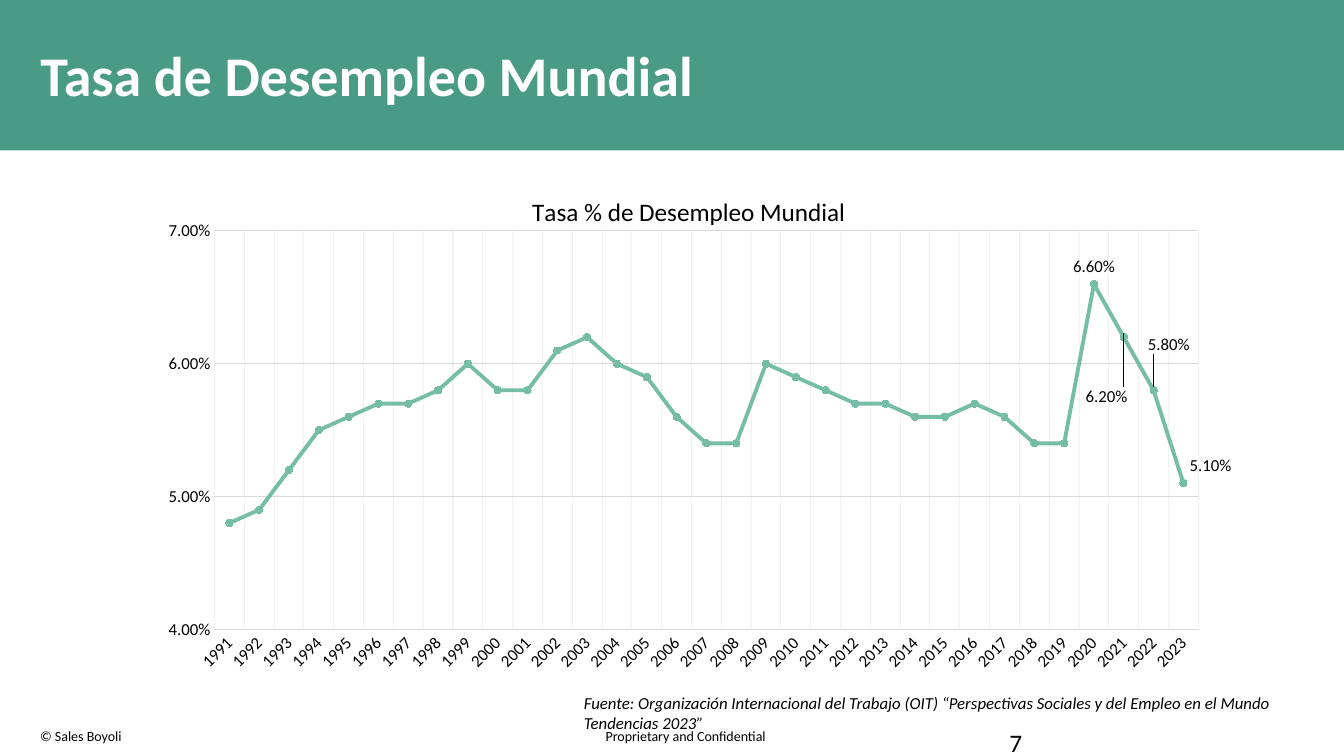
from lxml import etree
from pptx import Presentation
from pptx.chart.data import CategoryChartData
from pptx.dml.color import RGBColor
from pptx.enum.chart import XL_CHART_TYPE, XL_LABEL_POSITION, XL_MARKER_STYLE, XL_TICK_MARK
from pptx.enum.shapes import MSO_SHAPE
from pptx.enum.text import MSO_ANCHOR, MSO_AUTO_SIZE, PP_ALIGN
from pptx.oxml import parse_xml
from pptx.oxml.ns import qn
from pptx.util import Pt

LINE_CHART = XL_CHART_TYPE.LINE_MARKERS_STACKED
LABEL_ABOVE = XL_LABEL_POSITION.ABOVE
CIRCLE = XL_MARKER_STYLE.CIRCLE
NO_TICK = XL_TICK_MARK.NONE
RECTANGLE = MSO_SHAPE.RECTANGLE
MIDDLE = MSO_ANCHOR.MIDDLE
NO_AUTOFIT = MSO_AUTO_SIZE.NONE
LEFT = PP_ALIGN.LEFT

GREEN = RGBColor(0x4A, 0x9B, 0x83)
MINT = RGBColor(0x75, 0xBD, 0xA7)
GRID = RGBColor(0xD9, 0xD9, 0xD9)
PALE_GRID = RGBColor(0xF2, 0xF2, 0xF2)
BLACK = RGBColor(0, 0, 0)
WHITE = RGBColor(0xFF, 0xFF, 0xFF)
FONT = "Calibri"

TITLE_ONLY = 5
FIRST_YEAR = 1991
RATES = [
    4.8, 4.9, 5.2, 5.5, 5.6, 5.7, 5.7, 5.8, 6.0, 5.8, 5.8,
    6.1, 6.2, 6.0, 5.9, 5.6, 5.4, 5.4, 6.0, 5.9, 5.8, 5.7,
    5.7, 5.6, 5.6, 5.7, 5.6, 5.4, 5.4, 6.6, 6.2, 5.8, 5.1,
]
# Year: label shift from its place above the point, as shares of the chart
LABEL_SHIFTS = {2020: (0, 0), 2021: (-0.016, 0.149), 2022: (0.014, -0.054), 2023: (0.025, 0)}

CHART_NS = "http://schemas.openxmlformats.org/drawingml/2006/chart"
LEADER_LINES = f"""
<c:extLst xmlns:c="{CHART_NS}">
  <c:ext uri="{{CE6537A1-D6FC-4f65-9D91-7224C49458BB}}"
         xmlns:c15="http://schemas.microsoft.com/office/drawing/2012/chart">
    <c15:showLeaderLines val="1"/>
  </c:ext>
</c:extLst>"""


def style_font(font, size, color=BLACK, bold=False, italic=False):
    font.name = FONT
    font.size = Pt(size)
    font.bold = bold
    font.italic = italic
    font.color.rgb = color


def write(text_frame, lines, size, **style):
    for index, line in enumerate(lines):
        paragraph = text_frame.add_paragraph() if index else text_frame.paragraphs[0]
        paragraph.alignment = LEFT
        run = paragraph.add_run()
        run.text = line
        style_font(run.font, size, **style)


def add_text(slide, left, top, width, height, lines, size, wrap=True, **style):
    text_frame = slide.shapes.add_textbox(Pt(left), Pt(top), Pt(width), Pt(height)).text_frame
    text_frame.word_wrap = wrap
    write(text_frame, lines, size, **style)


def add_header(slide, text):
    title = slide.shapes.title
    title.left, title.top, title.width, title.height = Pt(21.6), Pt(10), Pt(916), Pt(91.5)
    title.text_frame.auto_size = NO_AUTOFIT
    title.text_frame.vertical_anchor = MIDDLE
    write(title.text_frame, [text], 40, color=WHITE, bold=True)
    title.text_frame.paragraphs[0].line_spacing = 0.9

    band = slide.shapes.add_shape(RECTANGLE, 0, 0, Pt(960), Pt(107.5))
    band.shadow.inherit = False
    band.fill.solid()
    band.fill.fore_color.rgb = GREEN
    band.line.fill.background()
    title._element.addprevious(band._element)


def set_layout(parent, previous, **settings):
    """Give a chart part a manual layout, placed after the child named previous."""
    for old in parent.findall(qn("c:layout")):
        parent.remove(old)
    layout = etree.Element(qn("c:layout"))
    manual = etree.SubElement(layout, qn("c:manualLayout"))
    for name, value in settings.items():
        etree.SubElement(manual, qn(f"c:{name}")).set("val", str(value))
    if previous:
        parent.find(qn(previous)).addnext(layout)
    else:
        parent.insert(0, layout)


def style_line(line, color, width):
    line.color.rgb = color
    line.width = Pt(width)


def style_axis(axis, grid_color):
    axis.major_tick_mark = NO_TICK
    axis.minor_tick_mark = NO_TICK
    axis.has_major_gridlines = True
    style_line(axis.major_gridlines.format.line, grid_color, 0.75)
    style_font(axis.tick_labels.font, 12)


def style_series(series):
    series.smooth = False
    style_line(series.format.line, MINT, 2.75)
    series.marker.style = CIRCLE
    series.marker.size = 5
    series.marker.format.fill.solid()
    series.marker.format.fill.fore_color.rgb = MINT
    style_line(series.marker.format.line, MINT, 0.75)

    series.data_labels.show_value = False
    for year, (x, y) in LABEL_SHIFTS.items():
        label = series.points[year - FIRST_YEAR].data_label
        style_font(label.font, 12)
        label.position = LABEL_ABOVE
        if x or y:
            set_layout(label._get_or_add_dLbl(), "c:idx", x=x, y=y)
    series.data_labels._element.append(parse_xml(LEADER_LINES))


def add_rate_chart(slide):
    data = CategoryChartData(number_format="0.00%")
    data.categories = [str(FIRST_YEAR + index) for index in range(len(RATES))]
    data.add_series("Series 1", [round(rate / 100, 3) for rate in RATES])
    frame = slide.shapes.add_chart(LINE_CHART, Pt(106), Pt(121), Pt(774), Pt(370), data)
    chart = frame.chart
    chart.has_legend = False
    style_font(chart.font, 10)

    chart.has_title = True
    write(chart.chart_title.text_frame, ["Tasa % de Desempleo Mundial"], 18)
    set_layout(chart.chart_title._element, "c:tx",
               xMode="edge", yMode="edge", x=0.35, y=0.04)
    set_layout(chart._chartSpace.chart.plotArea, None, layoutTarget="inner",
               xMode="edge", yMode="edge", x=0.061, y=0.119, w=0.908, h=0.769)

    years = chart.category_axis
    style_axis(years, PALE_GRID)
    style_line(years.format.line, GRID, 0.75)
    years.tick_labels.font._element.getparent().getparent().getparent().find(
        qn("a:bodyPr")).set("rot", "-2700000")

    rates = chart.value_axis
    style_axis(rates, GRID)
    rates.format.line.fill.background()
    rates.minimum_scale, rates.maximum_scale, rates.major_unit = 0.04, 0.07, 0.01
    rates.tick_labels.number_format = "0.00%"
    rates.tick_labels.number_format_is_linked = False

    chart.plots[0].vary_by_categories = False
    style_series(chart.plots[0].series[0])


def main():
    presentation = Presentation()
    presentation.slide_width, presentation.slide_height = Pt(960), Pt(540)
    slide = presentation.slides.add_slide(presentation.slide_layouts[TITLE_ONLY])
    add_header(slide, "Tasa de Desempleo Mundial")
    add_text(slide, 425.5, 516, 130, 19.4, ["Proprietary and Confidential"], 10, wrap=False)
    add_text(slide, 21.6, 516, 243, 19.4, ["© Sales Boyoli"], 10)
    add_text(slide, 714, 516, 224, 18, ["7"], 18)
    add_rate_chart(slide)
    add_text(slide, 410, 491, 509, 36, [
        "Fuente: Organización Internacional del Trabajo (OIT) "
        "“Perspectivas Sociales y del Empleo en el Mundo",
        "Tendencias 2023”",
    ], 12, italic=True)
    presentation.save("out.pptx")


if __name__ == "__main__":
    main()
